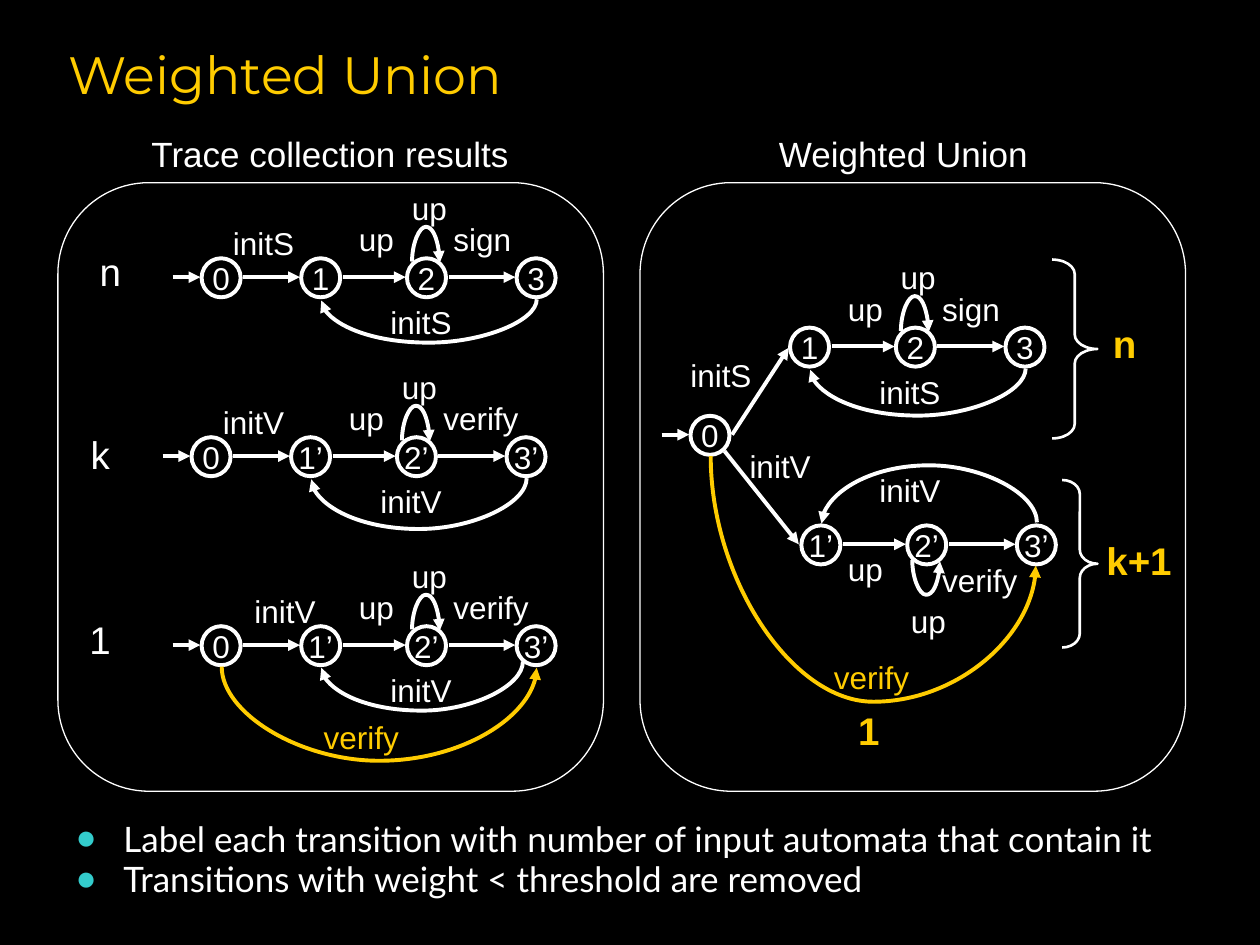
from lxml import etree
from pptx import Presentation
from pptx.dml.color import RGBColor
from pptx.enum.shapes import MSO_CONNECTOR as Connector, MSO_SHAPE as Shape
from pptx.enum.text import MSO_ANCHOR as Anchor, MSO_AUTO_SIZE as AutoSize, PP_ALIGN as Align
from pptx.oxml.ns import qn
from pptx.util import Inches, Pt

COLORS = {"background": "000000", "ink": "FFFFFF", "accent": "FFCC00", "bullet": "33CCCC"}
STATE_SIZE = 0.31
STATE_STEPS = (0, 0.79, 1.63, 2.5)
MIDDLE = 0.15  # height of the arrows below the top of a row of states
PANEL_SIZE = (4.33, 4.83)


def rgb(name):
    return RGBColor.from_string(COLORS[name])


def write(paragraph, text, size=18, font="Arial", color="ink", bold=False, align=Align.LEFT):
    paragraph.alignment = align
    run = paragraph.add_run()
    run.text = text
    run.font.size = Pt(size)
    run.font.name = font
    run.font.bold = bold
    run.font.color.rgb = rgb(color)


def place(shape, left, top, width, height):
    shape.left, shape.top = Inches(left), Inches(top)
    shape.width, shape.height = Inches(width), Inches(height)


def add_text(slide, text, left, top, width=0.75, height=0.47, wrap=True, **style):
    box = slide.shapes.add_textbox(Inches(left), Inches(top), Inches(width), Inches(height))
    box.text_frame.word_wrap = wrap
    box.text_frame.auto_size = AutoSize.SHAPE_TO_FIT_TEXT
    write(box.text_frame.paragraphs[0], text, **style)


def add_label(slide, text, left, top, color="ink"):
    """Name of a transition, in a box as wide as the word."""
    widths = {"up": 0.48, "sign": 0.66, "verify": 0.8}
    add_text(slide, text, left, top, widths.get(text, 0.69), 0.4, wrap=False, color=color)


def add_weight(slide, text, left, top, width=0.75, **style):
    add_text(slide, text, left, top, width, size=22, align=Align.CENTER, **style)


def add_outline(slide, kind, left, top, width, height, weight):
    shape = slide.shapes.add_shape(kind, Inches(left), Inches(top), Inches(width), Inches(height))
    shape.shadow.inherit = False
    shape.fill.background()
    shape.line.color.rgb = rgb("ink")
    shape.line.width = Pt(weight)
    return shape


def add_state(slide, name, left, top):
    state = add_outline(slide, Shape.OVAL, left, top, STATE_SIZE, STATE_SIZE, 2.25)
    frame = state.text_frame
    frame.word_wrap = False
    frame.vertical_anchor = Anchor.MIDDLE
    frame.margin_left = frame.margin_right = frame.margin_top = frame.margin_bottom = 0
    write(frame.paragraphs[0], name, align=Align.CENTER)


def add_arrow(slide, start, end, kind=Connector.STRAIGHT, color="ink"):
    arrow = slide.shapes.add_connector(kind, *map(Inches, (*start, *end)))
    arrow.line.color.rgb = rgb(color)
    arrow.line.width = Pt(2.25)
    properties = arrow._element.spPr
    etree.SubElement(properties.find(qn("a:ln")), qn("a:tailEnd"), type="triangle")
    etree.SubElement(properties, qn("a:effectLst"))
    return arrow


def add_arc(slide, start, end, bend, color="ink"):
    """Curved arrow that leaves vertically and turns at the height bend; end is not above start."""
    (x1, y1), (x2, y2) = start, end
    drop, span = max(y2 - y1, 0.01), abs(x2 - x1)
    upward = bend < y1
    turned = (x2 > x1) != upward
    arrow = add_arrow(slide, start, end, Connector.CURVE, color)
    place(arrow, (x1 + x2 - drop) / 2, (y1 + y2 - span) / 2, drop, span)
    properties = arrow._element.spPr
    frame = properties.find(qn("a:xfrm"))
    frame.set("rot", str((270 if turned else 90) * 60000))
    frame.set("flipH", str(int(turned)))
    frame.set("flipV", str(int(upward)))
    guides = properties.find(qn("a:prstGeom")).get_or_add_avLst()
    ratio = round((bend - y1) / drop * 100000)
    etree.SubElement(guides, qn("a:gd"), name="adj1", fmla=f"val {ratio}")


def add_entry(slide, left, top):
    """Start state 0 with its incoming arrow."""
    add_state(slide, "0", left, top)
    add_arrow(slide, (left - 0.23, top + MIDDLE), (left - 0.01, top + MIDDLE))


def add_cycle(slide, left, top, mark, init, last, depth, flipped=False, back_from=(2.66, 0.33)):
    """States 1 to 3 with their loop and way back; left is where state 0 of the row stands."""
    steps = STATE_STEPS[1:]
    for number, step in enumerate(steps, 1):
        add_state(slide, f"{number}{mark}", left + step, top)
    for step, following in zip(steps, steps[1:]):
        add_arrow(slide, (left + step + 0.33, top + MIDDLE), (left + following - 0.01, top + MIDDLE))
    loop, bend = (0.28, 0.56) if flipped else (0.03, -0.25)
    add_arc(slide, (left + 1.67, top + loop), (left + 1.89, top + loop), top + bend)
    back_x, back_y = back_from
    back_end = 0.33
    if flipped:
        back_y = back_end = -0.02
    add_arc(slide, (left + back_x, top + back_y), (left + 0.95, top + back_end), top + depth)
    spots = (((1.06, 0.15), (1.56, 0.56), (1.81, 0.23), (1.31, -0.48)) if flipped else
             ((1.15, -0.35), (1.57, -0.6), (1.9, -0.35), (1.4, 0.31)))
    for text, (x, y) in zip(("up", "up", last, init), spots):
        add_label(slide, text, left + x, top + y)


def add_automaton(slide, left, top, mark, init, last, depth, init_x=0.15, **cycle):
    add_entry(slide, left, top)
    add_arrow(slide, (left + 0.33, top + MIDDLE), (left + 0.78, top + MIDDLE))
    add_label(slide, init, left + init_x, top - 0.32)
    add_cycle(slide, left, top, mark, init, last, depth, **cycle)


def add_panel(slide, left, top, heading, heading_left, heading_width):
    add_outline(slide, Shape.ROUNDED_RECTANGLE, left, top, *PANEL_SIZE, 0.75)
    add_text(slide, heading, left + heading_left, top - 0.45, heading_width, 0.43,
             size=20, align=Align.CENTER)


def add_traces(slide, left, top):
    add_panel(slide, left, top, "Trace collection results", -0.13, 4.58)
    add_automaton(slide, left + 1.14, top + 0.6, "", "initS", "sign", 0.68)
    add_automaton(slide, left + 1.06, top + 2.02, "’", "initV", "verify", 0.74)
    x, y = left + 1.14, top + 3.52
    add_automaton(slide, x, y, "’", "initV", "verify", 0.67, init_x=0.32, back_from=(2.55, 0.28))
    add_arc(slide, (x + 0.16, y + 0.32), (x + 2.66, y + 0.33), y + 1.08, "accent")
    add_label(slide, "verify", x + 0.87, y + 0.68, "accent")
    for text, weight_x, weight_y in (("n", 0.04, 0.47), ("k", -0.04, 1.92), ("1", -0.04, 3.39)):
        add_weight(slide, text, left + weight_x, top + weight_y)


def add_union(slide, left, top):
    add_panel(slide, left, top, "Weighted Union", 0.84, 2.5)
    add_entry(slide, left + 0.4, top + 1.85)
    add_cycle(slide, left + 0.4, top + 1.15, "", "initS", "sign", 0.71)
    add_cycle(slide, left + 0.49, top + 2.72, "’", "initV", "verify", -0.48, flipped=True)
    add_arrow(slide, (left + 0.73, top + 2), (left + 1.18, top + 1.31))
    add_arrow(slide, (left + 0.67, top + 2.13), (left + 1.26, top + 2.87))
    add_label(slide, "initS", left + 0.3, top + 1.33)
    add_label(slide, "initV", left + 0.77, top + 2.05)
    add_arc(slide, (left + 0.56, top + 2.17), (left + 3.14, top + 3.04), top + 4.12, "accent")
    add_label(slide, "verify", left + 1.44, top + 3.72, "accent")
    for x, y, width, height, curl in ((3.27, 0.61, 0.36, 1.42, 0.32), (3.35, 2.36, 0.28, 1.33, 0.4)):
        brace = add_outline(slide, Shape.RIGHT_BRACE, left + x, top + y, width, height, 1.5)
        brace.adjustments[0] = curl
    for text, x, y, width in (("n", 3.47, 1.04, 0.75), ("k+1", 3.5, 2.76, 0.92), ("1", 1.44, 4.11, 0.75)):
        add_weight(slide, text, left + x, top + y, width, color="accent", bold=True)


def fill_title(title, text):
    place(title, 0.44, 0.25, 8.5, 0.67)
    title.text_frame.vertical_anchor = Anchor.MIDDLE
    write(title.text_frame.paragraphs[0], text, size=30, font="Montserrat", color="accent")


def fill_bullets(body, lines):
    place(body, 0.5, 6.5, 9.08, 0.84)
    frame = body.text_frame
    frame.vertical_anchor = Anchor.TOP
    for index, text in enumerate(lines):
        paragraph = frame.add_paragraph() if index else frame.paragraphs[0]
        write(paragraph, text, size=20, font="Lato")
        paragraph.line_spacing = 0.8
        paragraph.space_before = Pt(4)
        properties = paragraph._p.get_or_add_pPr()
        properties.set("marL", str(Inches(0.38)))
        properties.set("indent", str(-Inches(0.38)))
        bullet_color = etree.SubElement(properties, qn("a:buClr"))
        etree.SubElement(bullet_color, qn("a:srgbClr"), val=COLORS["bullet"])
        etree.SubElement(properties, qn("a:buChar"), char="●")


def main():
    presentation = Presentation()
    presentation.slide_width, presentation.slide_height = Inches(10), Inches(7.5)
    slide = presentation.slides.add_slide(presentation.slide_layouts[1])
    slide.background.fill.solid()
    slide.background.fill.fore_color.rgb = rgb("background")
    fill_title(slide.shapes.title, "Weighted Union")
    fill_bullets(slide.placeholders[1], (
        "Label each transition with number of input automata that contain it",
        "Transitions with weight < threshold are removed"))
    add_traces(slide, 0.46, 1.45)
    add_union(slide, 5.08, 1.45)
    presentation.save("out.pptx")


if __name__ == "__main__":
    main()
